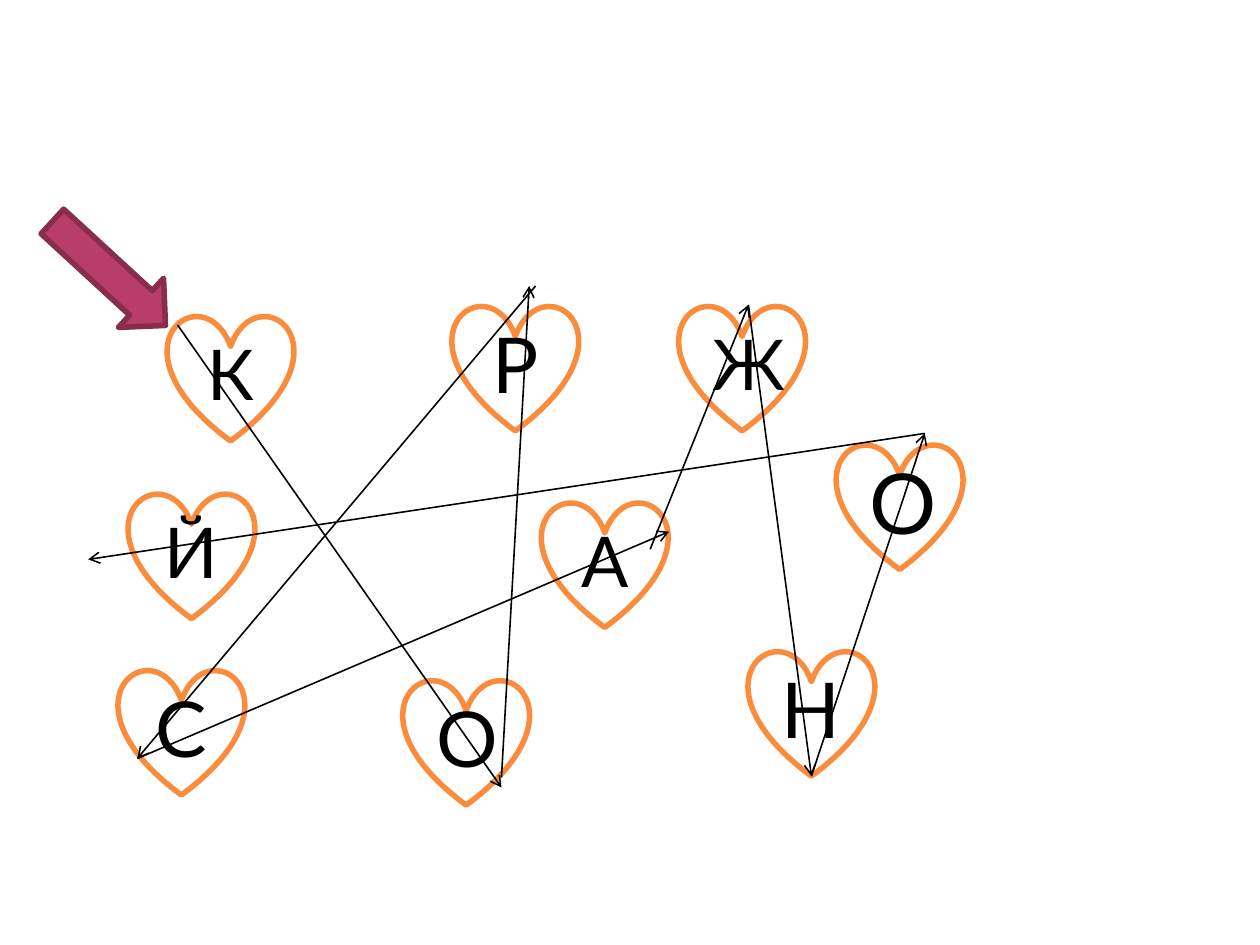
from lxml import etree
from pptx import Presentation
from pptx.dml.color import RGBColor
from pptx.enum import shapes, text
from pptx.oxml.ns import qn
from pptx.util import Inches, Pt


def paint(color_format, hex_color, width=None):
    """Give a fill, or a line of the given width, a solid colour."""
    if width is not None:
        color_format.width = Pt(width)
        color_format = color_format.fill
    color_format.solid()
    color_format.fore_color.rgb = RGBColor.from_string(hex_color)


presentation = Presentation()
presentation.slide_width = Inches(10)
presentation.slide_height = Inches(7.5)
slide = presentation.slides.add_slide(presentation.slide_layouts[6])

# Letter hearts: letter, left, top, text size
hearts = [
    ("К", 1.33, 2.5, 40),
    ("Р", 3.59, 2.42, 44),
    ("Н", 5.94, 5.16, 44),
    ("С", 0.94, 5.31, 44),
    ("Ж", 5.39, 2.42, 40),
    ("О", 6.64, 3.52, 48),
    ("О", 3.2, 5.39, 44),
    ("А", 4.3, 3.98, 40),
    ("Й", 1.02, 3.91, 40),
]
for letter, left, top, size in hearts:
    heart = slide.shapes.add_shape(
        shapes.MSO_SHAPE.HEART, Inches(left), Inches(top), Inches(1), Inches(1))
    heart.shadow.inherit = False
    paint(heart.fill, "FFFFFF")
    paint(heart.line, "FA8D3D", 3.15)
    heart.text_frame.vertical_anchor = text.MSO_ANCHOR.MIDDLE
    paragraph = heart.text_frame.paragraphs[0]
    paragraph.text = letter
    paragraph.alignment = text.PP_ALIGN.CENTER
    paragraph.font.name = "Lato"
    paragraph.font.size = Pt(size)
    paragraph.font.color.rgb = RGBColor.from_string("000000")

# Arrows that lead from letter to letter
steps = [
    (1.41, 2.58, 3.98, 6.25),
    (3.98, 6.17, 4.2, 2.27),
    (4.25, 2.27, 1.09, 6.02),
    (1.09, 6.02, 5.31, 4.22),
    (5.16, 4.36, 5.94, 2.42),
    (5.94, 2.42, 6.44, 6.16),
    (6.44, 6.16, 7.34, 3.44),
    (7.34, 3.44, 0.7, 4.44),
]
for step in steps:
    connector = slide.shapes.add_connector(
        shapes.MSO_CONNECTOR.STRAIGHT, *[Inches(value) for value in step])
    paint(connector.line, "000000", 0.9)
    properties = connector._element.spPr
    etree.SubElement(properties.find(qn("a:ln")), qn("a:tailEnd"), type="arrow")
    etree.SubElement(properties, qn("a:effectLst"))

start_arrow = slide.shapes.add_shape(
    shapes.MSO_SHAPE.DOWN_ARROW, Inches(0.6), Inches(1.56), Inches(0.53), Inches(1.22))
start_arrow.rotation = 312.6
start_arrow.shadow.inherit = False
paint(start_arrow.fill, "B83D68")
paint(start_arrow.line, "882D4D", 3.15)

presentation.save("out.pptx")
